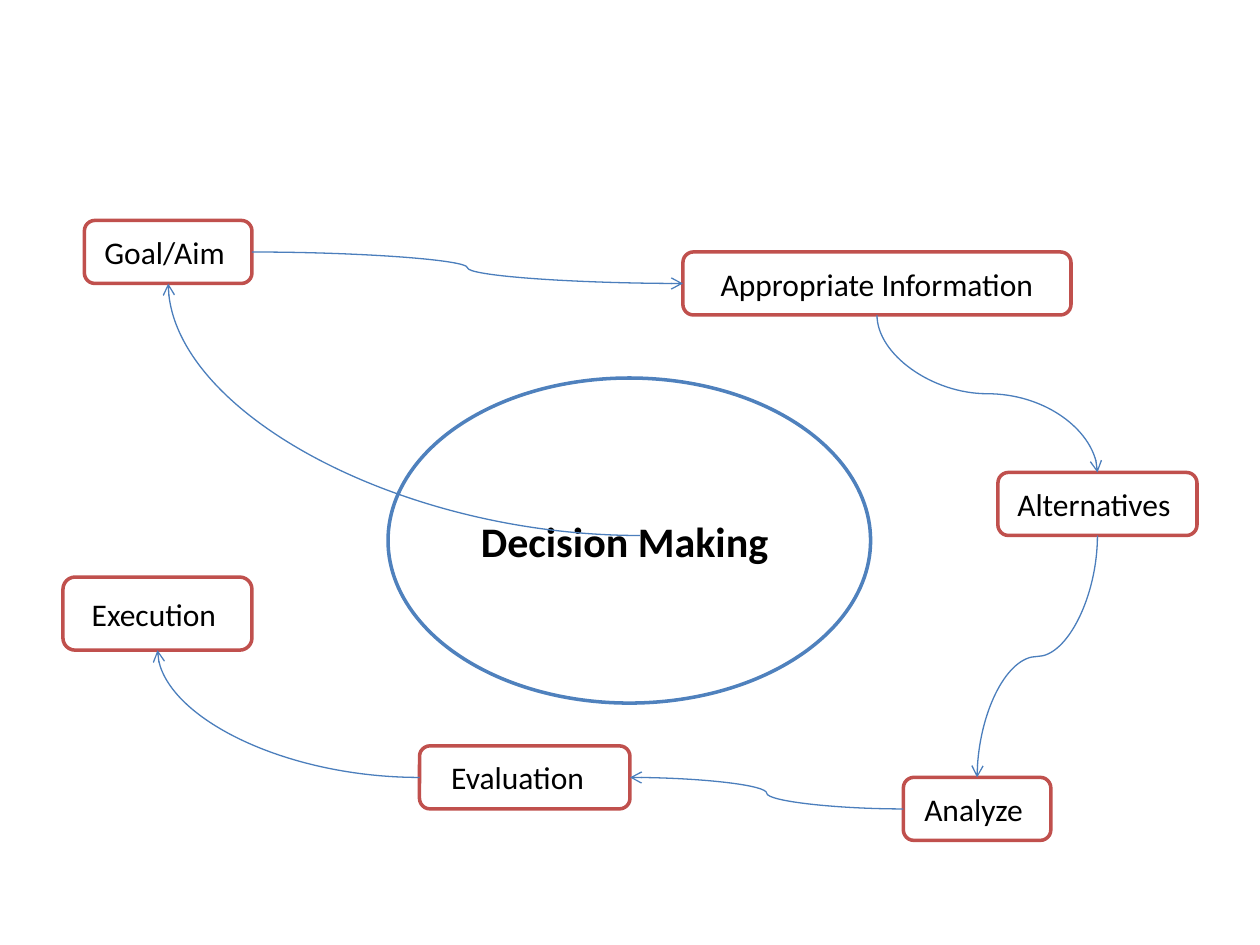
from lxml.etree import SubElement
from pptx import Presentation
from pptx.dml.color import RGBColor
from pptx.enum.shapes import MSO_CONNECTOR, MSO_SHAPE
from pptx.enum.text import MSO_ANCHOR, PP_ALIGN
from pptx.oxml.ns import qn
from pptx.util import Inches, Pt

BLUE, RED, ARROW_BLUE = "4F81BD", "C0504D", "4B7EBC"

# Step name: text, (left, top, width, height)
STEPS = {
    "goal": ("Goal/Aim ", (0.67, 1.75, 1.33, 0.5)),
    "analyze": ("Analyze ", (7.17, 6.17, 1.17, 0.5)),
    "information": ("Appropriate Information", (5.42, 2, 3.08, 0.5)),
    "alternatives": ("Alternatives ", (7.92, 3.75, 1.58, 0.5)),
    "evaluation": ("Evaluation  ", (3.33, 5.92, 1.67, 0.5)),
    "execution": ("Execution ", (0.5, 4.58, 1.5, 0.58)),
}


def color(value):
    return RGBColor.from_string(value)


def add_node(page, kind, place, text, outline, **font_format):
    """Add a white outlined shape with centred black text."""
    node = page.shapes.add_shape(kind, *map(Inches, place))
    node.shadow.inherit = False
    node.fill.solid()
    node.fill.fore_color.rgb = color("FFFFFF")
    node.line.color.rgb = color(outline)
    node.line.width = Pt(2)
    frame = node.text_frame
    frame.word_wrap = True
    frame.vertical_anchor = MSO_ANCHOR.MIDDLE
    para = frame.paragraphs[0]
    para.alignment = PP_ALIGN.CENTER
    span = para.add_run()
    span.text = text
    span.font.color.rgb = color("000000")
    for name, value in {"name": "Calibri", **font_format}.items():
        setattr(span.font, name, value)


def side(step, name):
    """Return the middle of one side of a step's box."""
    left, top, width, height = STEPS[step][1]
    return {
        "top": (left + width / 2, top),
        "left": (left, top + height / 2),
        "bottom": (left + width / 2, top + height),
        "right": (left + width, top + height / 2),
    }[name]


def add_curve(page, begin, end, vertical=False, corner=False):
    """Add a curved arrow; vertical leaves up or down, corner bends only once."""
    (x1, y1), (x2, y2) = begin, end
    width, height = abs(x2 - x1), abs(y2 - y1)
    rightward = x2 > x1
    if vertical:
        width, height = height, width
        turn = 270 if rightward else 90
    else:
        turn = 0 if rightward else 180
    left, top = (x1 + x2 - width) / 2, (y1 + y2 - height) / 2
    ends = [left, left + width]
    if turn == 270:
        ends.reverse()
    curve = page.shapes.add_connector(
        MSO_CONNECTOR.CURVE, Inches(ends[0]), Inches(top),
        Inches(ends[1]), Inches(top + height))
    curve.line.color.rgb = color(ARROW_BLUE)
    curve.line.width = Pt(0.75)
    properties = curve.element.spPr
    if turn:
        properties.find(qn("a:xfrm")).set("rot", str(turn * 60000))
    if corner:
        properties.find(qn("a:prstGeom")).set("prst", "curvedConnector2")
    SubElement(properties.find(qn("a:ln")), qn("a:tailEnd"), type="arrow")
    SubElement(properties, qn("a:effectLst"))


def main():
    deck = Presentation()
    deck.slide_width, deck.slide_height = Inches(10), Inches(7.5)
    page = deck.slides.add_slide(deck.slide_layouts[6])

    add_node(page, MSO_SHAPE.OVAL, (3.08, 3, 3.83, 2.58), "Decision Making ",
             BLUE, size=Pt(24), bold=True)
    for text, place in STEPS.values():
        add_node(page, MSO_SHAPE.ROUNDED_RECTANGLE, place, text, RED, size=Pt(18))

    add_curve(page, side("goal", "right"), side("information", "left"))
    add_curve(page, side("information", "bottom"), side("alternatives", "top"),
              vertical=True)
    add_curve(page, side("alternatives", "bottom"), side("analyze", "top"),
              vertical=True)
    add_curve(page, side("analyze", "left"), side("evaluation", "right"))
    add_curve(page, side("evaluation", "left"), side("execution", "bottom"),
              corner=True)
    add_curve(page, (5.08, 4.25), side("goal", "bottom"), corner=True)

    deck.save("out.pptx")


if __name__ == "__main__":
    main()
